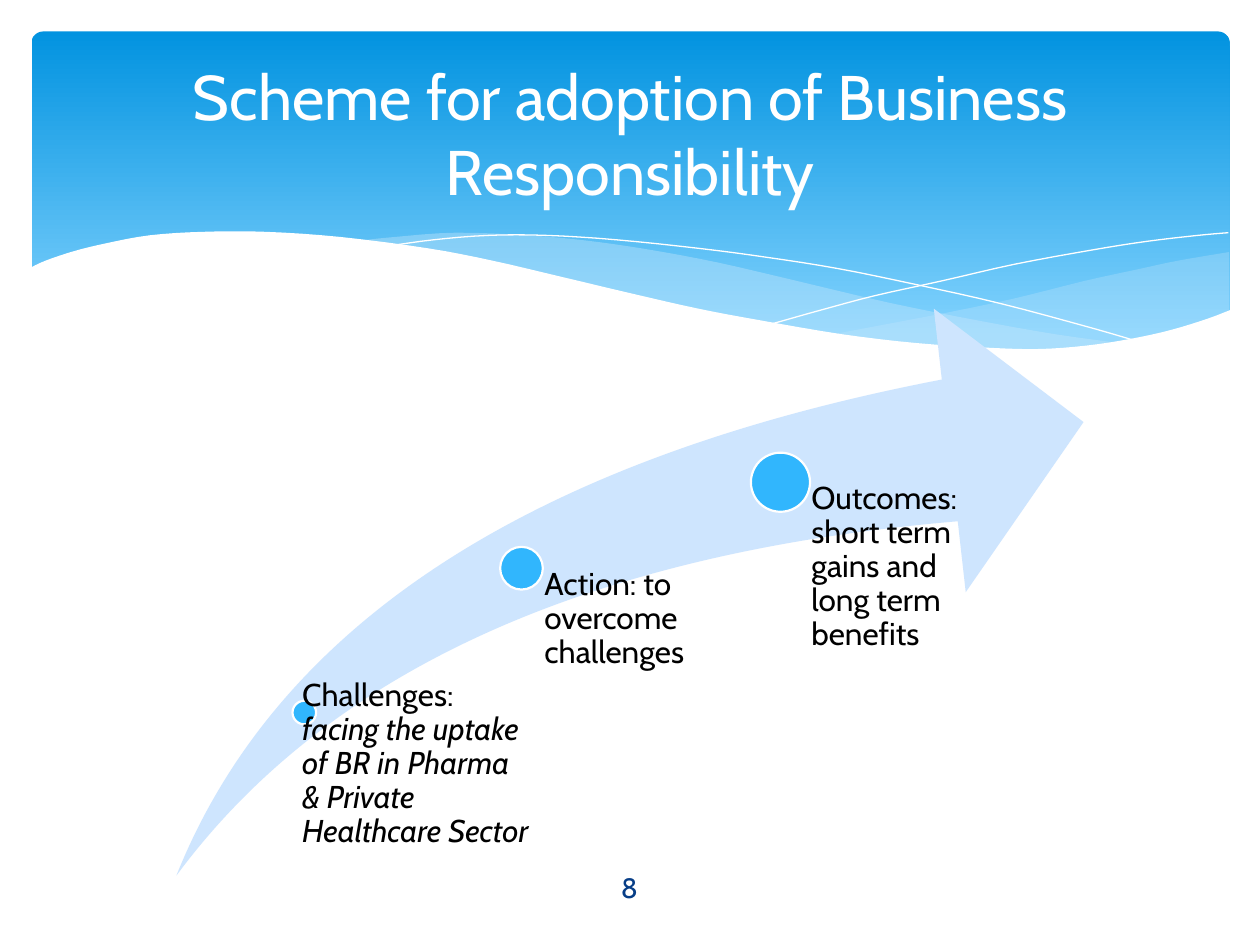
"""Build the slide on the scheme for adoption of business responsibility."""
from lxml.etree import SubElement
from pptx import Presentation
from pptx.dml.color import RGBColor
from pptx.enum.shapes import MSO_SHAPE
from pptx.enum.text import MSO_ANCHOR, PP_ALIGN
from pptx.oxml.ns import qn
from pptx.util import Pt

FONT = "Cabin"
WHITE = RGBColor(0xFF, 0xFF, 0xFF)
BLACK = RGBColor(0x00, 0x00, 0x00)
NAVY = RGBColor(0x07, 0x3E, 0x87)
BAND_TOP = RGBColor(0x02, 0x93, 0xE0)
BAND_BOTTOM = RGBColor(0x83, 0xD3, 0xFE)
WAVE_BLUE = RGBColor(0xC6, 0xE7, 0xFC)
ARROW_BLUE = RGBColor(0xCE, 0xE5, 0xFE)
DOT_BLUE = RGBColor(0x31, 0xB6, 0xFD)

TITLE = "Scheme for adoption of Business Responsibility"
PAGE_NUMBER = "8"

STEPS = [
    {"runs": [("Challenges: ", False),
              ("facing the uptake of BR in Pharma & Private Healthcare Sector", True)],
     "center": (173.9, 407.2), "diameter": 13.5,
     "box": (165.6, 388.1, 137.5, 131), "inset": 7.2},
    {"runs": [("Action: to overcome challenges", False)],
     "center": (298, 324.7), "diameter": 24.4,
     "box": (298.1, 324.7, 124.5, 176.4), "inset": 13},
    {"runs": [("Outcomes: short term gains and long term benefits", False)],
     "center": (446, 275.6), "diameter": 33.8,
     "box": (445.7, 275.8, 124.5, 225.4), "inset": 18},
]

RIGHT_WAVE = [
    [(702.5, 144), (673, 149), (652, 153.5), (620, 160.5), (580, 170.5),
     (542, 178.5), (508, 185), (476, 191)],
    [(476, 191), (508, 195), (536, 198), (578, 200), (608, 199.5),
     (634, 196.5), (657, 192), (678, 186.5), (702.5, 178)],
]
MIDDLE_WAVE = [
    [(206, 137.5), (225, 135.5), (260, 133), (302, 134.5), (335, 137.5),
     (370, 142.5), (410, 150), (453, 160), (508, 173), (558, 183),
     (603, 191), (643, 196.5)],
    [(643, 196.5), (617, 199.5), (589, 200), (557, 199.5), (520, 197.5),
     (479, 191.5), (433, 183.5), (382, 173), (323, 160), (291, 152),
     (261, 146), (233, 141), (206, 137.5)],
]
FALLING_LINE = [
    (222.5, 140.5), (248, 137), (279, 134.5), (312, 134.5), (352, 137),
    (400, 142), (438, 147), (479, 153.5), (523, 162.5), (572, 173.5),
    (626, 188), (653, 196),
]
RISING_LINE = [
    (441.5, 185), (470, 177), (500, 169), (538.5, 160.5), (580, 151),
    (623.5, 143), (655, 138), (685, 134.5), (702, 133),
]
WHITE_WAVE = [
    [(16.5, 153.5), (26, 149), (42.5, 143.5), (61, 139), (85.5, 134.5),
     (116, 132.5), (152, 132.5), (195, 135.5), (245, 142), (281.5, 149),
     (322, 158.5), (362, 168), (399.5, 176.5), (434, 183), (481, 191),
     (523, 196), (560, 198.5), (592.5, 199.5), (621, 197.5), (647, 193.5),
     (669.5, 188.5), (690.5, 182), (703.5, 177)],
    [(703.5, 237), (16.5, 237)],
]


def smooth(points, steps=4):
    """Return a Catmull-Rom curve through the points."""
    padded = [points[0], *points, points[-1]]
    curve = [points[0]]
    for a, b, c, d in zip(padded, padded[1:], padded[2:], padded[3:]):
        for step in range(1, steps + 1):
            t = step / steps
            curve.append(tuple(
                (2 * q + (r - p) * t + (2 * p - 5 * q + 4 * r - s) * t ** 2
                 + (3 * q - p - 3 * r + s) * t ** 3) / 2
                for p, q, r, s in zip(a, b, c, d)))
    return curve


def add_outline(slide, edges, closed):
    """Draw a freeform from edges, smoothing those with more than two points."""
    points = [point for edge in edges
              for point in (smooth(edge) if len(edge) > 2 else edge)]
    vertices = [(Pt(x), Pt(y)) for x, y in points]
    builder = slide.shapes.build_freeform(*vertices[0])
    builder.add_line_segments(vertices[1:], close=closed)
    shape = builder.convert_to_shape()
    shape.shadow.inherit = False
    return shape


def add_wave(slide, edges, color, opacity=100):
    """Draw a filled wave with the given opacity in percent."""
    shape = add_outline(slide, edges, True)
    shape.fill.solid()
    shape.fill.fore_color.rgb = color
    shape.line.fill.background()
    if opacity < 100:
        color_element = shape._element.spPr.find(qn("a:solidFill"))[0]
        SubElement(color_element, qn("a:alpha")).set("val", str(opacity * 1000))


def add_line(slide, points):
    """Draw a white hairline curve."""
    shape = add_outline(slide, [points], False)
    shape.fill.background()
    shape.line.color.rgb = WHITE
    shape.line.width = Pt(0)


def add_preset(slide, kind, box, color=None):
    """Add a preset shape without outline or shadow."""
    shape = slide.shapes.add_shape(kind, *map(Pt, box))
    shape.shadow.inherit = False
    shape.line.fill.background()
    if color is not None:
        shape.fill.solid()
        shape.fill.fore_color.rgb = color
    return shape


def add_text(slide, box, runs, size, color, align=PP_ALIGN.CENTER, inset=None):
    """Add wrapped text; an inset means a top-anchored label."""
    frame = slide.shapes.add_textbox(*map(Pt, box)).text_frame
    frame.word_wrap = True
    paragraph = frame.paragraphs[0]
    paragraph.alignment = align
    if inset is None:
        frame.vertical_anchor = MSO_ANCHOR.MIDDLE
    else:
        frame.margin_left = Pt(inset)
        frame.margin_top = frame.margin_right = frame.margin_bottom = 0
        paragraph.line_spacing = 0.9
    paragraph.font.name = FONT
    paragraph.font.size = Pt(size)
    paragraph.font.color.rgb = color
    for text, italic in runs:
        run = paragraph.add_run()
        run.text = text
        if italic:
            run.font.italic = True


def add_header(slide):
    """Draw the gradient band and its waves."""
    band = add_preset(slide, MSO_SHAPE.ROUNDED_RECTANGLE, (18, 18, 684.7, 194.4))
    band.adjustments[0] = 0.034
    band.fill.gradient()
    band.fill.gradient_angle = 270
    stops = [(0, BAND_TOP), (0.9, BAND_BOTTOM)]
    for stop, (position, color) in zip(band.fill.gradient_stops, stops):
        stop.position = position
        stop.color.rgb = color
    add_wave(slide, RIGHT_WAVE, WAVE_BLUE, 29)
    add_wave(slide, MIDDLE_WAVE, WAVE_BLUE, 40)
    add_line(slide, FALLING_LINE)
    add_line(slide, RISING_LINE)
    add_wave(slide, WHITE_WAVE, WHITE)


def add_steps(slide):
    """Draw the arrow with its dots and labels."""
    arrow = add_preset(slide, MSO_SHAPE.SWOOSH_ARROW, (100.8, 176.4, 518.4, 324), ARROW_BLUE)
    arrow.adjustments[0] = arrow.adjustments[1] = 0.25
    for step in STEPS:
        x, y = step["center"]
        diameter = step["diameter"]
        box = (x - diameter / 2, y - diameter / 2, diameter, diameter)
        dot = add_preset(slide, MSO_SHAPE.OVAL, box, DOT_BLUE)
        dot.line.color.rgb = WHITE
        dot.line.width = Pt(1.25)
        add_text(slide, step["box"], step["runs"], 18, BLACK, PP_ALIGN.LEFT, step["inset"])


def main():
    """Build and save the presentation."""
    presentation = Presentation()
    presentation.slide_width, presentation.slide_height = Pt(720), Pt(540)
    slide = presentation.slides.add_slide(presentation.slide_layouts[6])
    add_header(slide)
    add_steps(slide)
    add_text(slide, (36, 26.6, 648, 98.6), [(TITLE, False)], 36, WHITE)
    add_text(slide, (313.9, 492.5, 91.4, 28.8), [(PAGE_NUMBER, False)], 16, NAVY)
    presentation.save("out.pptx")


if __name__ == "__main__":
    main()
